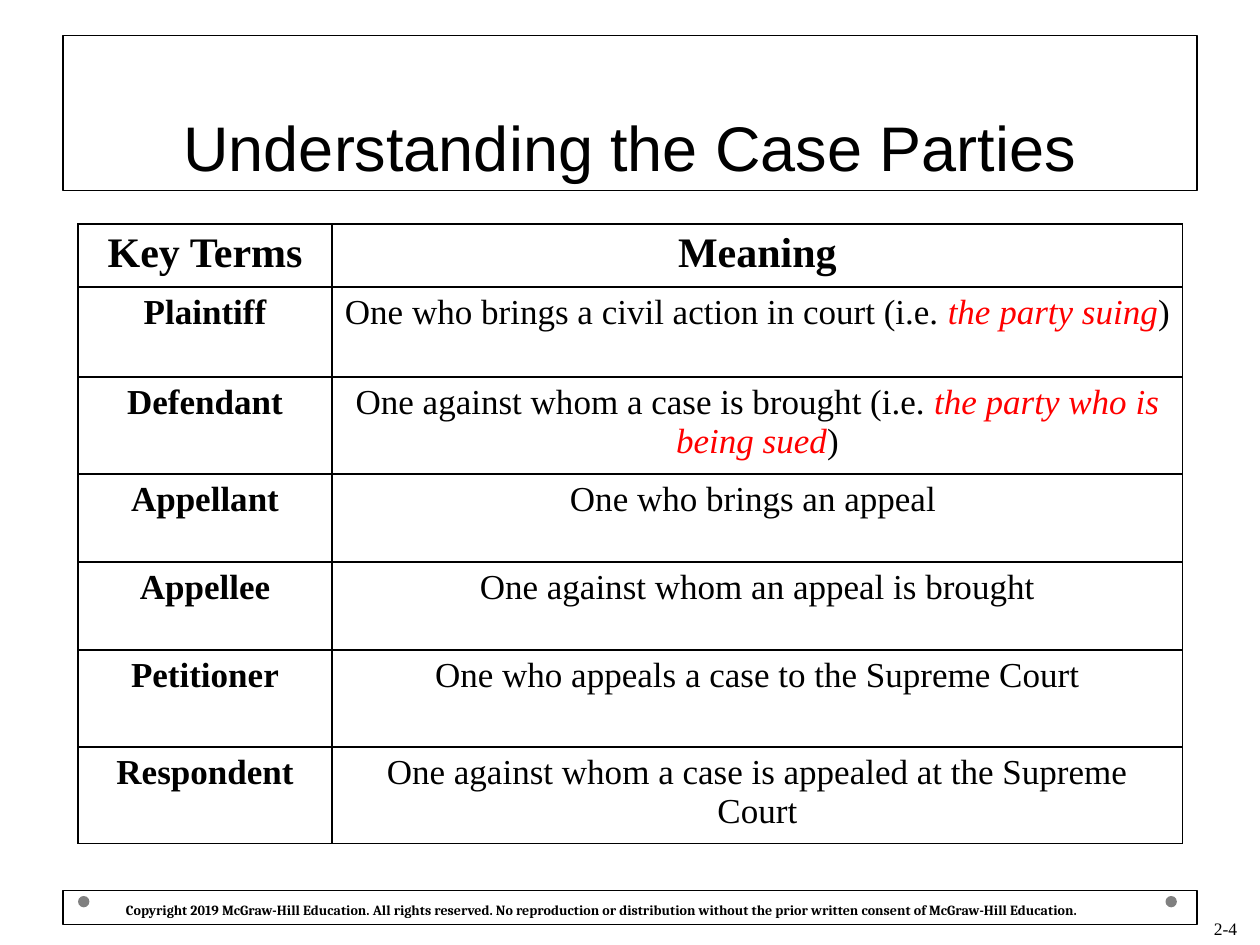
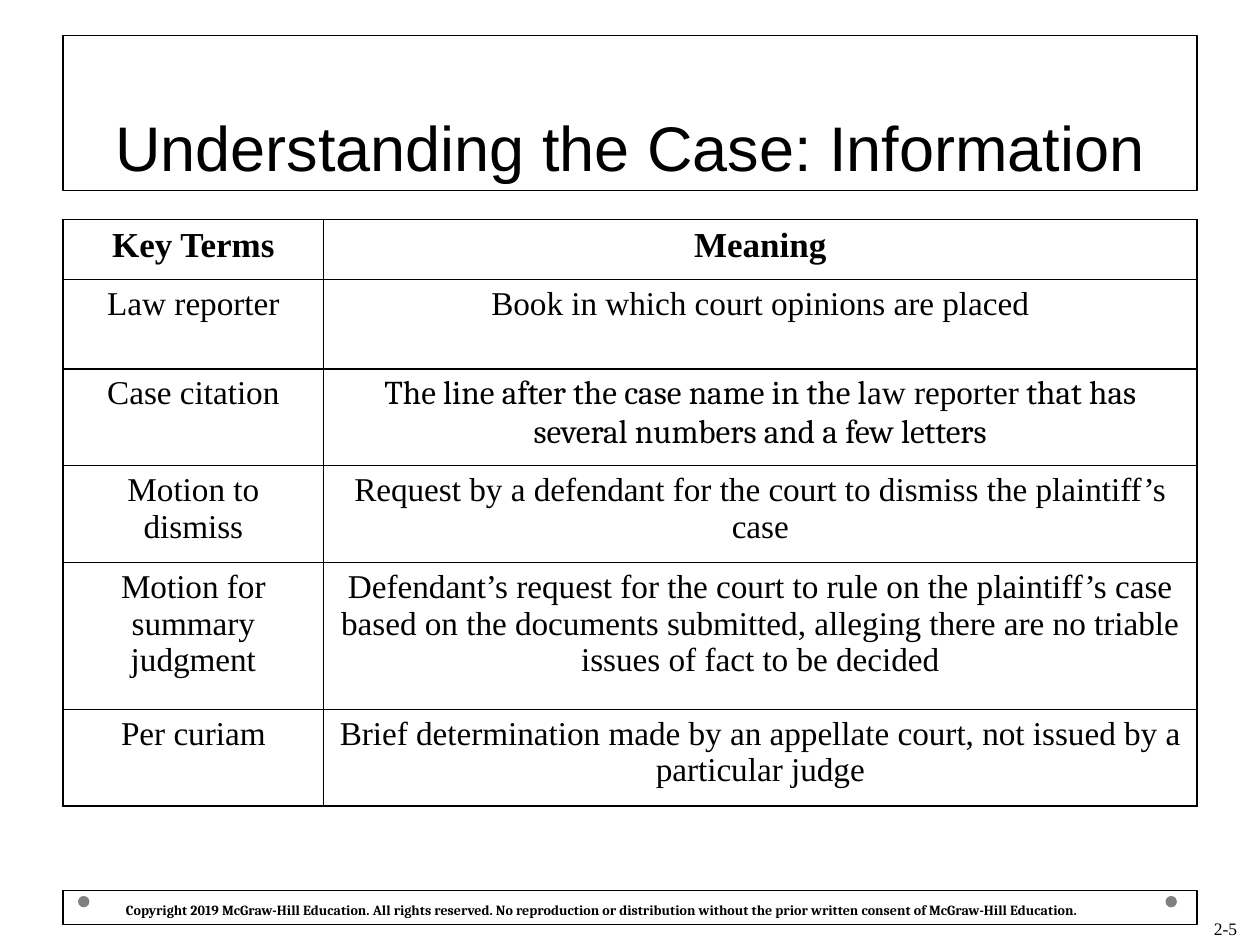
from lxml.etree import SubElement
from pptx import Presentation
from pptx.dml.color import RGBColor
from pptx.enum.shapes import MSO_SHAPE
from pptx.enum.text import MSO_ANCHOR, PP_ALIGN
from pptx.oxml.ns import qn
from pptx.util import Pt

BLACK = RGBColor(0, 0, 0)
RED = RGBColor(255, 0, 0)
GREY = RGBColor(128, 128, 128)
WHITE = RGBColor(255, 255, 255)
TITLE_FONT = "Arial"
BODY_FONT = "Times New Roman"
NOTICE_FONT = "Cambria"
COPYRIGHT = (
    "Copyright 2019 McGraw-Hill Education. All rights reserved. No reproduction or "
    "distribution without the prior written consent of McGraw-Hill Education."
)
RED_ITALIC = {"color": RED, "italic": True}
CAMBRIA = {"font": NOTICE_FONT}

PARTIES = [
    ("Key Terms", "Meaning"),
    ("Plaintiff", [("One who brings a civil action in court (i.e. ", {}),
                   ("the party suing", RED_ITALIC), (")", {})]),
    ("Defendant", [("One against whom a case is brought (i.e. ", {}),
                   ("the party who is being sued", RED_ITALIC), (")", {})]),
    ("Appellant", "One who brings an appeal "),
    ("Appellee", "One against whom an appeal is brought"),
    ("Petitioner", "One who appeals a case to the Supreme Court"),
    ("Respondent", "One against whom a case is appealed at the Supreme Court"),
]
INFORMATION = [
    ("Key Terms", "Meaning"),
    ("Law reporter", "Book in which court opinions are placed"),
    ("Case citation", [("The line after the case name in the l", CAMBRIA), ("aw reporter", {}),
                       (" that has several numbers and a few letters", CAMBRIA)]),
    ("Motion to dismiss", "Request by a defendant for the court to dismiss the plaintiff’s case"),
    ("Motion for summary judgment",
     "Defendant’s request for the court to rule on the plaintiff’s case based on the documents "
     "submitted, alleging there are no triable issues of fact to be decided"),
    ("Per curiam",
     "Brief determination made by an appellate court, not issued by a particular judge"),
]


class CaseDeck:
    def __init__(self):
        self.deck = Presentation()
        self.deck.slide_width, self.deck.slide_height = Pt(720), Pt(540)
        self.page = None

    def add_page(self, title, number):
        self.page = self.deck.slides.add_slide(self.deck.slide_layouts[6])
        self.page.background.fill.solid()
        self.page.background.fill.fore_color.rgb = WHITE
        for left in (666, 44.6):
            self.add_shape(MSO_SHAPE.OVAL, left, 512, 6.5, 6.5, fill=GREY)
        page_number = self.page.shapes.add_textbox(Pt(546), Pt(504), Pt(168), Pt(36))
        self.add_text(page_number.text_frame, number, BODY_FONT, 10, PP_ALIGN.RIGHT,
                      MSO_ANCHOR.BOTTOM)
        title_box = self.add_shape(MSO_SHAPE.RECTANGLE, 36, 20.5, 648, 88.5, line=BLACK)
        self.add_text(title_box.text_frame, title, TITLE_FONT, 36, anchor=MSO_ANCHOR.BOTTOM)
        notice = self.add_shape(MSO_SHAPE.RECTANGLE, 36, 509, 648, 19.5, line=BLACK)
        frame = notice.text_frame
        frame.margin_left, frame.margin_top, frame.margin_bottom = Pt(36), Pt(6), 0
        self.add_text(frame, COPYRIGHT, NOTICE_FONT, 8, PP_ALIGN.LEFT, bold=True)

    def add_shape(self, kind, left, top, width, height, fill=None, line=None):
        shape = self.page.shapes.add_shape(kind, Pt(left), Pt(top), Pt(width), Pt(height))
        shape.shadow.inherit = False
        if fill is None:
            shape.fill.background()
        else:
            shape.fill.solid()
            shape.fill.fore_color.rgb = fill
        if line is None:
            shape.line.fill.background()
        else:
            shape.line.color.rgb = line
            shape.line.width = Pt(0.75)
        return shape

    def add_text(self, frame, content, font, size, align=PP_ALIGN.CENTER,
                 anchor=MSO_ANCHOR.TOP, bold=False):
        frame.word_wrap = True
        frame.vertical_anchor = anchor
        para = frame.paragraphs[0]
        para.alignment = align
        spans = [(content, {})] if isinstance(content, str) else content
        for text, style in spans:
            span = para.add_run()
            span.text = text
            span.font.name = style.get("font", font)
            span.font.size = Pt(size)
            span.font.bold = bold
            span.font.italic = style.get("italic", False)
            span.font.color.rgb = style.get("color", BLACK)

    def add_border(self, cell):
        properties = cell._tc.get_or_add_tcPr()
        for index, side in enumerate(("a:lnL", "a:lnR", "a:lnT", "a:lnB")):
            line = SubElement(properties, qn(side), w=str(Pt(1)))
            fill = SubElement(line, qn("a:solidFill"))
            SubElement(fill, qn("a:srgbClr"), val=str(BLACK))
            properties.insert(index, line)

    def add_terms(self, terms, left, top, widths, heights, header_size, size, bold_terms):
        frame = self.page.shapes.add_table(len(terms), 2, Pt(left), Pt(top),
                                           Pt(sum(widths)), Pt(sum(heights)))
        table = frame.table
        table.first_row = table.horz_banding = False
        for column, width in zip(table.columns, widths):
            column.width = Pt(width)
        for row_index, (row, height, contents) in enumerate(zip(table.rows, heights, terms)):
            row.height = Pt(height)
            is_header = row_index == 0
            for column_index, (cell, content) in enumerate(zip(row.cells, contents)):
                cell.fill.background()
                self.add_border(cell)
                bold = is_header or (bold_terms and column_index == 0)
                self.add_text(cell.text_frame, content, BODY_FONT,
                              header_size if is_header else size, bold=bold)


def main():
    cases = CaseDeck()
    cases.add_page("Understanding the Case Parties", "2-4")
    cases.add_terms(PARTIES, 44.6, 128, (145.2, 486), (36, 51.5, 51.5, 50.4, 50.4, 55.3, 52.5),
                    24, 20, True)
    cases.add_page("Understanding the Case: Information", "2-5")
    cases.add_terms(INFORMATION, 36, 125.4, (149, 499), (34.4, 51, 55.3, 55.3, 84, 55.3),
                    20, 19, False)
    cases.deck.save("out.pptx")


if __name__ == "__main__":
    main()
